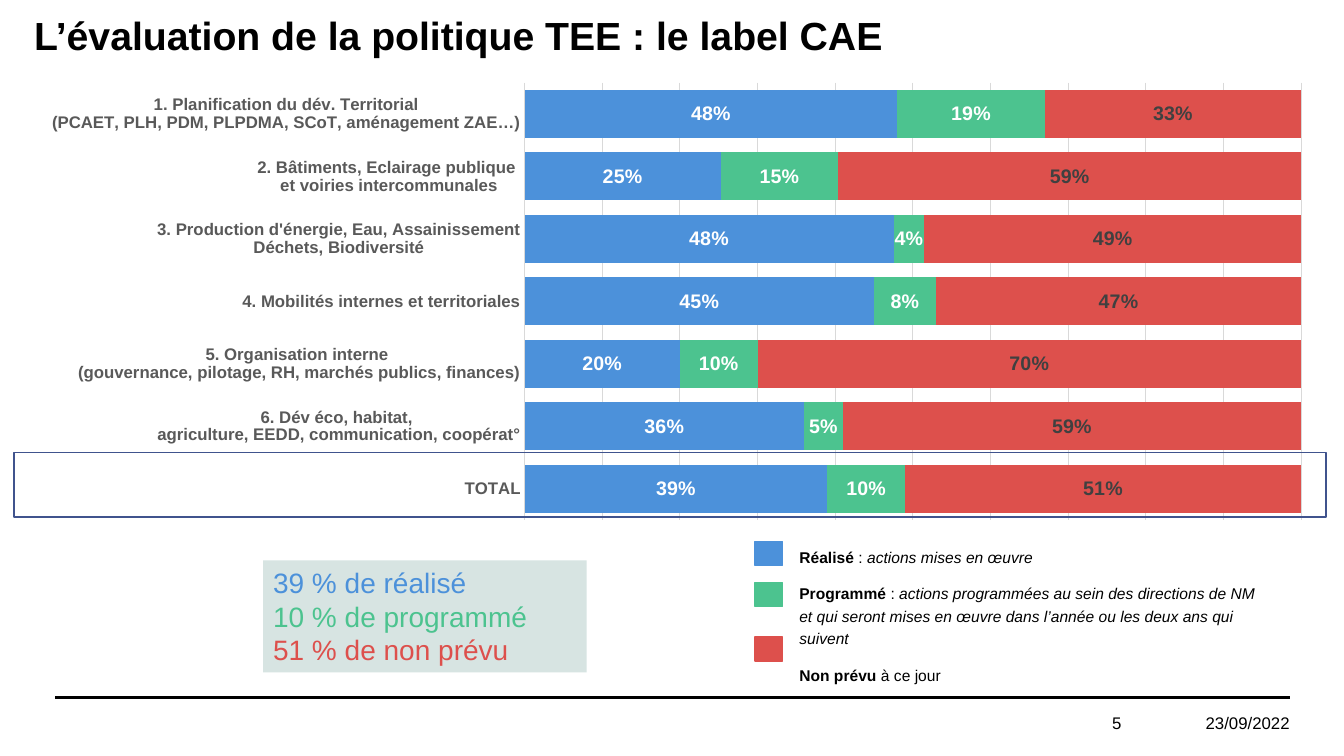
"""Build the slide on the evaluation of the TEE policy."""
import pptx
import pptx.chart.data
import pptx.dml.color
import pptx.enum.chart
import pptx.enum.shapes
import pptx.enum.text
import pptx.oxml
import pptx.oxml.ns
import pptx.util
from pptx.util import Inches

BLUE, GREEN, RED = "4C91DA", "4CC38F", "DD504C"
BLACK, GRID = "000000", "D9D9D9"
TITLE = "L’évaluation de la politique TEE : le label CAE"
CATEGORIES = [
    "1. Planification du dév. Territorial\n(PCAET, PLH, PDM, PLPDMA, SCoT, aménagement ZAE…)",
    "2. Bâtiments, Eclairage publique \net voiries intercommunales",
    "3. Production d'énergie, Eau, Assainissement\nDéchets, Biodiversité",
    "4. Mobilités internes et territoriales",
    "5. Organisation interne \n(gouvernance, pilotage, RH, marchés publics, finances)",
    "6. Dév éco, habitat, \nagriculture, EEDD, communication, coopérat°",
    "TOTAL",
]
SERIES = [
    ("Réalisé", BLUE, "FFFFFF", (0.48, 0.25, 0.48, 0.45, 0.2, 0.36, 0.39)),
    ("Programmé", GREEN, "FFFFFF", (0.19, 0.15, 0.04, 0.08, 0.1, 0.05, 0.1)),
    ("Non prévu", RED, "404040", (0.33, 0.59, 0.49, 0.47, 0.7, 0.59, 0.51)),
]
LEGEND = [
    [("Réalisé", {"bold": True}), (" : ", {}), ("actions mises en œuvre", {"italic": True})],
    [("Programmé", {"bold": True}), (" : ", {}),
     ("actions programmées au sein des directions de NM et qui seront mises en œuvre "
      "dans l’année ou les deux ans qui suivent", {"italic": True})],
    [("Non prévu ", {"bold": True}), ("à ce jour", {})],
]
SUMMARY = [("39 % de réalisé", BLUE), ("10 % de programmé", GREEN), ("51 % de non prévu", RED)]
SWATCHES = [(5.37, BLUE), (5.78, GREEN), (6.32, RED)]
FOOTER = [("5", (10.44, 6.97, 0.78, 0.4)), ("23/09/2022", (11.64, 6.97, 1.25, 0.4))]
PLOT_AREA = {"x": 0.384, "y": 0.02, "w": 0.597, "h": 0.96}


def color(value):
    return pptx.dml.color.RGBColor.from_string(value)


def set_font(font, size, fill=BLACK, bold=False, italic=False):
    font.name, font.size = "Arial", pptx.util.Pt(size)
    font.bold, font.italic = bold, italic
    font.color.rgb = color(fill)


def write(frame, text, first=False, align="LEFT", spacing=None, before=0, indent=0, **style):
    """Add a paragraph; text is a string or a list of (string, style) spans."""
    para = frame.paragraphs[0] if first else frame.add_paragraph()
    para.alignment = getattr(pptx.enum.text.PP_ALIGN, align)
    para.line_spacing = spacing
    para.space_before = pptx.util.Pt(before)
    if indent:
        para._p.get_or_add_pPr().set("marL", str(Inches(indent)))
    for words, extra in [(text, {})] if isinstance(text, str) else text:
        span = para.add_run()
        span.text = words
        set_font(span.font, **{**style, **extra})


def add_frame(page, place, anchor="TOP"):
    frame = page.shapes.add_textbox(*map(Inches, place)).text_frame
    frame.word_wrap = True
    frame.vertical_anchor = getattr(pptx.enum.text.MSO_ANCHOR, anchor)
    return frame


def add_box(page, place, fill=None, line=None):
    box = page.shapes.add_shape(pptx.enum.shapes.MSO_SHAPE.RECTANGLE, *map(Inches, place))
    box.shadow.inherit = False
    if fill:
        box.fill.solid()
        box.fill.fore_color.rgb = color(fill)
    else:
        box.fill.background()
    if line:
        box.line.color.rgb = color(line)
        box.line.width = pptx.util.Pt(1)
    else:
        box.line.fill.background()
    return box


def add_rule(page):
    rule = page.shapes.add_connector(
        pptx.enum.shapes.MSO_CONNECTOR.STRAIGHT, *map(Inches, (0.55, 6.92, 12.79, 6.92)))
    rule.line.color.rgb = color(BLACK)
    rule.line.width = pptx.util.Pt(1.5)
    rule._element.spPr.append(pptx.oxml.parse_xml(
        "<a:effectLst %s/>" % pptx.oxml.ns.nsdecls("a")))


def add_bars(page):
    data = pptx.chart.data.CategoryChartData(number_format="0%")
    data.categories = CATEGORIES
    for name, _, _, values in SERIES:
        data.add_series(name, values)
    chart = page.shapes.add_chart(
        pptx.enum.chart.XL_CHART_TYPE.BAR_STACKED_100,
        *map(Inches, (0.25, 0.73, 12.9, 4.52)), data).chart
    chart.has_legend = chart.has_title = False
    set_font(chart.font, 10)

    plot = chart.plots[0]
    plot.gap_width, plot.overlap, plot.vary_by_categories = 30, 100, False
    for series, (_, fill, ink, _) in zip(plot.series, SERIES):
        series.format.fill.solid()
        series.format.fill.fore_color.rgb = color(fill)
        labels = series.data_labels
        labels.show_value = True
        labels.number_format, labels.number_format_is_linked = "0%", False
        labels.position = pptx.enum.chart.XL_LABEL_POSITION.CENTER
        set_font(labels.font, 14, ink, bold=True)

    themes, scale = chart.category_axis, chart.value_axis
    themes.reverse_order = True
    themes.major_tick_mark = pptx.enum.chart.XL_TICK_MARK.NONE
    set_font(themes.tick_labels.font, 12, "595959", bold=True)
    scale.visible = False
    scale.minimum_scale, scale.maximum_scale, scale.major_unit = 0, 1, 0.1
    for line in (themes.format.line, scale.major_gridlines.format.line):
        line.color.rgb = color(GRID)
        line.width = pptx.util.Pt(0.75)

    parts = "".join('<c:%s val="%s"/>' % part for part in PLOT_AREA.items())
    layout = pptx.oxml.parse_xml(
        '<c:layout %s><c:manualLayout><c:layoutTarget val="inner"/><c:xMode val="edge"/>'
        '<c:yMode val="edge"/>%s</c:manualLayout></c:layout>'
        % (pptx.oxml.ns.nsdecls("c"), parts))
    area = chart._chartSpace.chart.plotArea
    for old in area.findall(pptx.oxml.ns.qn("c:layout")):
        area.remove(old)
    area.insert(0, layout)


def main():
    deck = pptx.Presentation()
    deck.slide_width, deck.slide_height = Inches(13.33), Inches(7.5)
    page = deck.slides.add_slide(deck.slide_layouts[6])

    add_rule(page)
    for text, place in FOOTER:
        write(add_frame(page, place, "MIDDLE"), text, first=True, align="RIGHT", size=12)
    add_bars(page)

    legend = add_frame(page, (7.63, 5.35, 5.07, 1.42))
    for index, spans in enumerate(LEGEND):
        write(legend, spans, first=index == 0, spacing=1.2, before=10, indent=0.2, size=11.1)
    for top, fill in SWATCHES:
        add_box(page, (7.49, top, 0.27, 0.24), fill, fill)

    summary = add_box(page, (2.61, 5.56, 3.21, 1.11), "D7E4E2").text_frame
    summary.word_wrap = True
    summary.vertical_anchor = pptx.enum.text.MSO_ANCHOR.TOP
    for index, (text, ink) in enumerate(SUMMARY):
        write(summary, text, first=index == 0, size=20, fill=ink)

    add_box(page, (0.14, 4.49, 13.01, 0.64), line="40538D")
    write(add_frame(page, (0.24, 0.12, 12.46, 0.81)), TITLE, first=True,
          spacing=0.9, size=28, bold=True)
    deck.save("out.pptx")


if __name__ == "__main__":
    main()
